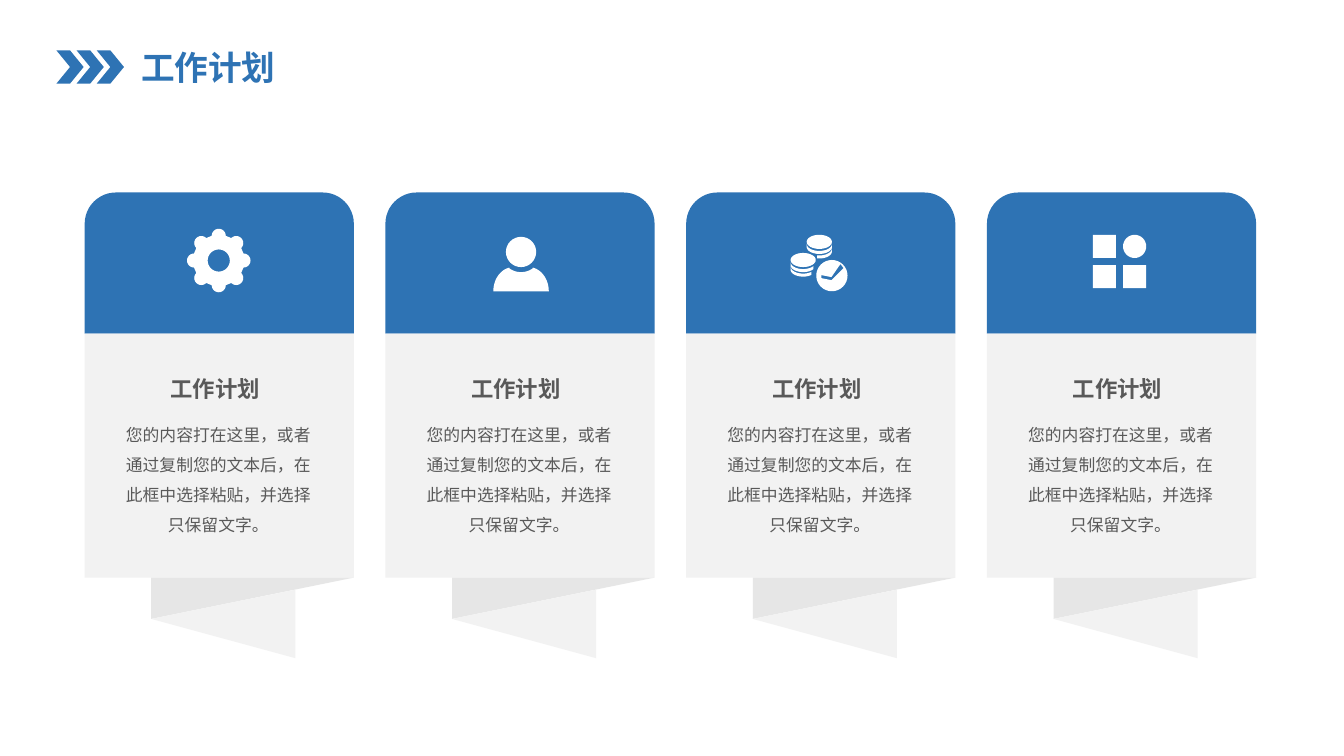
from math import cos, pi, radians, sin

from lxml import etree
from pptx import Presentation
from pptx.dml.color import RGBColor
from pptx.enum.shapes import MSO_SHAPE
from pptx.enum.text import MSO_ANCHOR, MSO_AUTO_SIZE, PP_ALIGN
from pptx.oxml.ns import qn
from pptx.util import Inches, Pt

CHEVRON = MSO_SHAPE.CHEVRON
RECTANGLE = MSO_SHAPE.RECTANGLE
ROUND_TOP = MSO_SHAPE.ROUND_2_SAME_RECTANGLE
LEFT = PP_ALIGN.LEFT
CENTER = PP_ALIGN.CENTER
TOP = MSO_ANCHOR.TOP
GROW = MSO_AUTO_SIZE.SHAPE_TO_FIT_TEXT

FONT = "Noto Sans CJK SC"
COLORS = {
    "blue": "2E73B4",
    "panel": "F2F2F2",
    "fold": "E6E6E6",
    "text": "595959",
    "white": "FFFFFF",
}
HEADING = "工作计划"
DETAIL = "您的内容打在这里，或者通过复制您的文本后，在此框中选择粘贴，并选择只保留文字。"

CARD_LEFT, CARD_PITCH, CARD_WIDTH = 0.84, 2.983, 2.67
CARD_TOP, PANEL_TOP, PANEL_BOTTOM = 1.91, 3.31, 5.73
CORNER = 0.31


def arc(cx, cy, rx, ry, start=0, end=360, steps=32):
    angles = [radians(start + (end - start) * i / steps) for i in range(steps + 1)]
    return [(cx + rx * cos(a), cy + ry * sin(a)) for a in angles]


def square(left, top, side):
    return [(left, top), (left + side, top), (left + side, top + side), (left, top + side)]


def gear_icon():
    cx, cy = 1.33, 2.585
    rim = []
    for tooth in range(8):
        turn = tooth * pi / 4
        for x, y in arc(0.245, 0, 0.07, 0.07, -90, 90, 12):
            rim.append((cx + x * cos(turn) - y * sin(turn),
                        cy + x * sin(turn) + y * cos(turn)))
    return [rim, arc(cx, cy, 0.11, 0.11)]


def person_icon():
    cx, neck, base = 1.345, 2.5, 2.89
    body = (arc(cx - 0.075, base, 0.2, 0.24, 180, 258)
            + arc(cx, neck, 0.2, 0.2, 125, 55)
            + arc(cx + 0.075, base, 0.2, 0.24, 282, 360))
    return [arc(cx, neck, 0.15, 0.15), body]


def coin_stack(cx, cy, bands):
    contours = [arc(cx, cy, 0.125, 0.07)]
    for level, (start, end) in enumerate(bands):
        upper = cy + 0.02 + 0.045 * level
        contours.append(arc(cx, upper, 0.125, 0.07, start, end)
                        + arc(cx, upper + 0.03, 0.125, 0.07, end, start))
    return contours


def coins_icon():
    check = [(1.34, 2.76), (1.34, 2.73), (1.44, 2.75),
             (1.53, 2.62), (1.56, 2.66), (1.44, 2.78)]
    return (coin_stack(1.32, 2.4, [(0, 180), (0, 100)])
            + coin_stack(1.16, 2.58, [(35, 180), (50, 180)])
            + [arc(1.445, 2.735, 0.155, 0.155), check])


def tiles_icon():
    left, top, side, step = 1.05, 2.33, 0.23, 0.3
    tiles = [square(left + step * col, top + step * row, side)
             for col, row in ((0, 0), (0, 1), (1, 1))]
    radius = side / 2
    return tiles + [arc(left + step + radius, top + radius, radius, radius)]


class Deck:
    def __init__(self):
        self.presentation = Presentation()
        self.presentation.slide_width = Inches(13.33)
        self.presentation.slide_height = Inches(7.5)
        self.slide = self.presentation.slides.add_slide(self.presentation.slide_layouts[5])
        self.target = self.slide.shapes

    def group(self):
        self.target = self.slide.shapes.add_group_shape().shapes

    def paint(self, shape, color):
        shape.shadow.inherit = False
        shape.fill.solid()
        shape.fill.fore_color.rgb = RGBColor.from_string(COLORS[color])
        shape.line.fill.background()

    def block(self, kind, box, color, adjustments=()):
        shape = self.target.add_shape(kind, *map(Inches, box))
        for index, value in enumerate(adjustments):
            shape.adjustments[index] = value
        self.paint(shape, color)

    def outline(self, contours, left, color):
        placed = [[(Inches(left + x), Inches(y)) for x, y in points] for points in contours]
        first, *others = placed
        builder = self.target.build_freeform(*first[0])
        builder.add_line_segments(first[1:], close=True)
        for points in others:
            builder.move_to(*points[0])
            builder.add_line_segments(points[1:], close=True)
        self.paint(builder.convert_to_shape(), color)

    def fill_text(self, frame, words, size, color, bold=False, align=CENTER, spacing=1.0,
                  wrap=True, insets=(0, 0)):
        side, edge = map(Inches, insets)
        paragraph = frame.paragraphs[0]
        run = paragraph.add_run()
        run.text = words
        formats = (
            (frame, {"word_wrap": wrap, "auto_size": GROW, "vertical_anchor": TOP,
                     "margin_left": side, "margin_right": side,
                     "margin_top": edge, "margin_bottom": edge}),
            (paragraph, {"alignment": align, "line_spacing": spacing}),
            (run.font, {"size": Pt(size), "bold": bold, "name": FONT}),
        )
        for part, values in formats:
            for name, value in values.items():
                setattr(part, name, value)
        run.font.color.rgb = RGBColor.from_string(COLORS[color])
        etree.SubElement(run.font._element, qn("a:ea"), typeface=FONT)

    def title(self, words, box):
        heading = self.slide.shapes.title
        for name, value in zip(("left", "top", "width", "height"), box):
            setattr(heading, name, Inches(value))
        self.fill_text(heading.text_frame, words, 24, "blue", bold=True, align=LEFT,
                       wrap=False, insets=(0.1, 0.05))

    def label(self, words, box, size, **style):
        textbox = self.target.add_textbox(*map(Inches, box))
        self.fill_text(textbox.text_frame, words, size, "text", **style)

    def card(self, left, icon):
        self.group()
        header_height = PANEL_TOP - CARD_TOP
        self.block(ROUND_TOP, (left, CARD_TOP, CARD_WIDTH, header_height), "blue",
                   (CORNER / header_height, 0))
        self.block(RECTANGLE, (left, PANEL_TOP, CARD_WIDTH, PANEL_BOTTOM - PANEL_TOP), "panel")
        fold = [(CARD_WIDTH, PANEL_BOTTOM), (0.66, 6.14), (0.66, PANEL_BOTTOM)]
        tail = [(0.66, 6.14), (2.09, 6.53), (2.09, 5.85)]
        self.outline([fold], left, "fold")
        self.outline([tail], left, "panel")
        self.label(HEADING, (left + 0.75, 3.72, 1.09, 0.27), 16, bold=True)
        self.label(DETAIL, (left + 0.33, 4.11, 1.99, 1.21), 12, spacing=1.5)
        self.outline(icon, left, "white")


def main():
    deck = Deck()
    deck.title(HEADING, (1.3, 0.42, 1.55, 0.5))
    deck.group()
    for step in range(3):
        deck.block(CHEVRON, (0.56 + 0.2 * step, 0.5, 0.27, 0.33), "blue")
    icons = (gear_icon(), person_icon(), coins_icon(), tiles_icon())
    for position, icon in enumerate(icons):
        deck.card(CARD_LEFT + CARD_PITCH * position, icon)
    deck.presentation.save("out.pptx")


if __name__ == "__main__":
    main()
